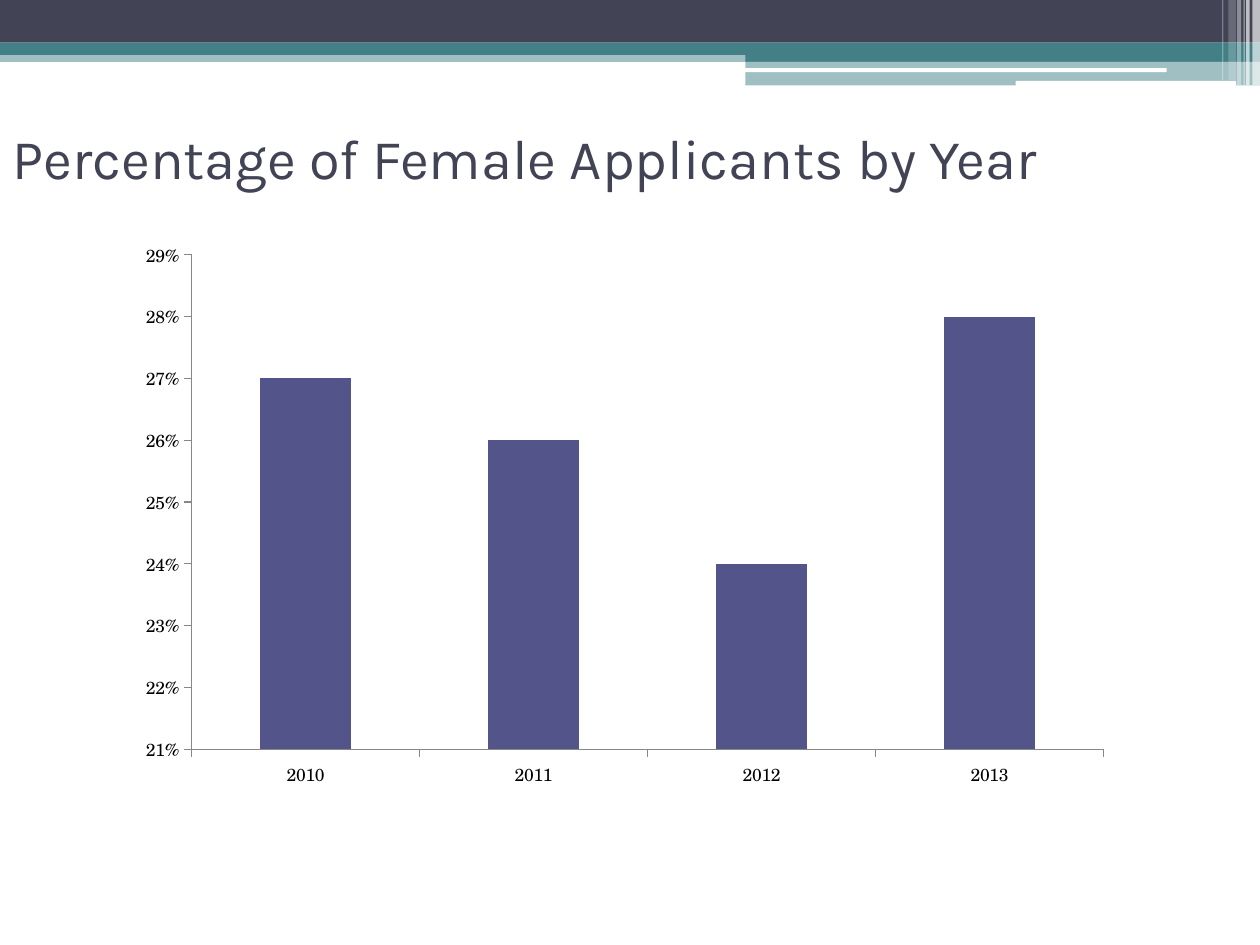
from dataclasses import dataclass

from lxml import etree
from pptx import Presentation
from pptx.chart.data import CategoryChartData
from pptx.dml.color import RGBColor
from pptx.enum.chart import XL_CHART_TYPE, XL_TICK_MARK
from pptx.enum.shapes import MSO_SHAPE
from pptx.enum.text import MSO_ANCHOR
from pptx.oxml.ns import qn
from pptx.util import Pt

RECT = MSO_SHAPE.RECTANGLE
ROUNDED = MSO_SHAPE.ROUNDED_RECTANGLE
STACKED = XL_CHART_TYPE.COLUMN_STACKED
TICK_OUT = XL_TICK_MARK.OUTSIDE
TICK_NONE = XL_TICK_MARK.NONE
MIDDLE = MSO_ANCHOR.MIDDLE


@dataclass(frozen=True)
class Theme:
    dark: RGBColor = RGBColor(0x42, 0x44, 0x56)
    teal: RGBColor = RGBColor(0x43, 0x80, 0x86)
    white: RGBColor = RGBColor(0xFF, 0xFF, 0xFF)
    column: RGBColor = RGBColor(0x53, 0x54, 0x8A)
    axis: RGBColor = RGBColor(0x87, 0x87, 0x87)
    label: RGBColor = RGBColor(0, 0, 0)
    title_font: str = "Karla"
    chart_font: str = "TeX Gyre Schola"
    title_size: int = 32
    chart_size: int = 10


THEME = Theme()
PAGE_WIDTH, PAGE_HEIGHT = 720, 540


def add_bar(page, box, color, opacity=100, shape_type=RECT):
    bar = page.shapes.add_shape(shape_type, *map(Pt, box))
    bar.shadow.inherit = False
    bar.fill.solid()
    bar.fill.fore_color.rgb = color
    bar.line.fill.background()
    if opacity < 100:
        color_node = bar.fill._xPr.find(".//" + qn("a:srgbClr"))
        alpha = etree.SubElement(color_node, qn("a:alpha"))
        alpha.set("val", str(opacity * 1000))
    return bar


def add_header(page, box):
    left, top, width, height = box
    step_left = left + 426
    step_width = width - 426

    # Full-width bands and the step on the right
    add_bar(page, (left, top + 28.8, width, 6.6), THEME.teal, 50)
    add_bar(page, (left, top, width, 24.4), THEME.dark)
    add_bar(page, (left, top + 24.4, width, 7), THEME.teal)
    add_bar(page, (step_left, top + 28, step_width, 7.2), THEME.teal)
    add_bar(page, (step_left, top + 34.8, step_width, height - 34.8), THEME.teal, 50)

    # White slits
    for slit_left, slit_top, slit_width, slit_height in (
        (425.5, 39, 241.2, 2.2),
        (580.4, 46.2, 126, 2.8),
    ):
        slit = (left + slit_left, top + slit_top, slit_width, slit_height)
        add_bar(page, slit, THEME.white, shape_type=ROUNDED)

    # Translucent stripes: distance from the right edge, width, bottom gap, opacity
    for distance, stripe_width, gap, opacity in (
        (4.3, 4.3, 0, 65),
        (7.9, 2, 0, 65),
        (9.4, 0.7, 0, 60),
        (13, 2.2, 0, 40),
        (18, 4.3, 2.9, 20),
        (21.6, 0.7, 2.9, 30),
    ):
        stripe = (left + width - distance, top, stripe_width, height - gap)
        add_bar(page, stripe, THEME.white, opacity)


def add_title(page, box, text):
    title = page.shapes.add_textbox(*map(Pt, box))
    frame = title.text_frame
    frame.word_wrap = True
    frame.vertical_anchor = MIDDLE
    frame.text = text
    font = frame.paragraphs[0].runs[0].font
    font.name = THEME.title_font
    font.size = Pt(THEME.title_size)
    font.color.rgb = THEME.dark


def add_applicant_chart(page, box):
    data = CategoryChartData(number_format="0%")
    data.categories = ["2010", "2011", "2012", "2013"]
    data.add_series("Series 1", (0.27, 0.26, 0.24, 0.28))
    chart = page.shapes.add_chart(STACKED, *map(Pt, box), data).chart
    chart.has_title = False
    chart.has_legend = False
    chart.font.name = THEME.chart_font
    chart.font.size = Pt(THEME.chart_size)
    chart.font.color.rgb = THEME.label

    # Columns
    plot = chart.plots[0]
    plot.gap_width = 150
    plot.overlap = 100
    plot.vary_by_categories = False
    fill = plot.series[0].format.fill
    fill.solid()
    fill.fore_color.rgb = THEME.column

    # Axes
    for axis in (chart.category_axis, chart.value_axis):
        axis.has_major_gridlines = False
        axis.major_tick_mark = TICK_OUT
        axis.minor_tick_mark = TICK_NONE
        axis.format.line.color.rgb = THEME.axis
        axis.format.line.width = Pt(0.75)
    scale = chart.value_axis
    scale.minimum_scale = 0.21
    scale.maximum_scale = 0.29
    scale.major_unit = 0.01
    scale.tick_labels.number_format = "0%"
    scale.tick_labels.number_format_is_linked = False


def main():
    deck = Presentation()
    deck.slide_width, deck.slide_height = Pt(PAGE_WIDTH), Pt(PAGE_HEIGHT)
    page = deck.slides.add_slide(deck.slide_layouts[6])
    add_header(page, (0, 0, PAGE_WIDTH, 48.8))
    add_title(page, (0, 54, 696, 72), "Percentage of Female Applicants by Year")
    add_applicant_chart(page, (72, 132, 570, 324))
    deck.save("out.pptx")


if __name__ == "__main__":
    main()
